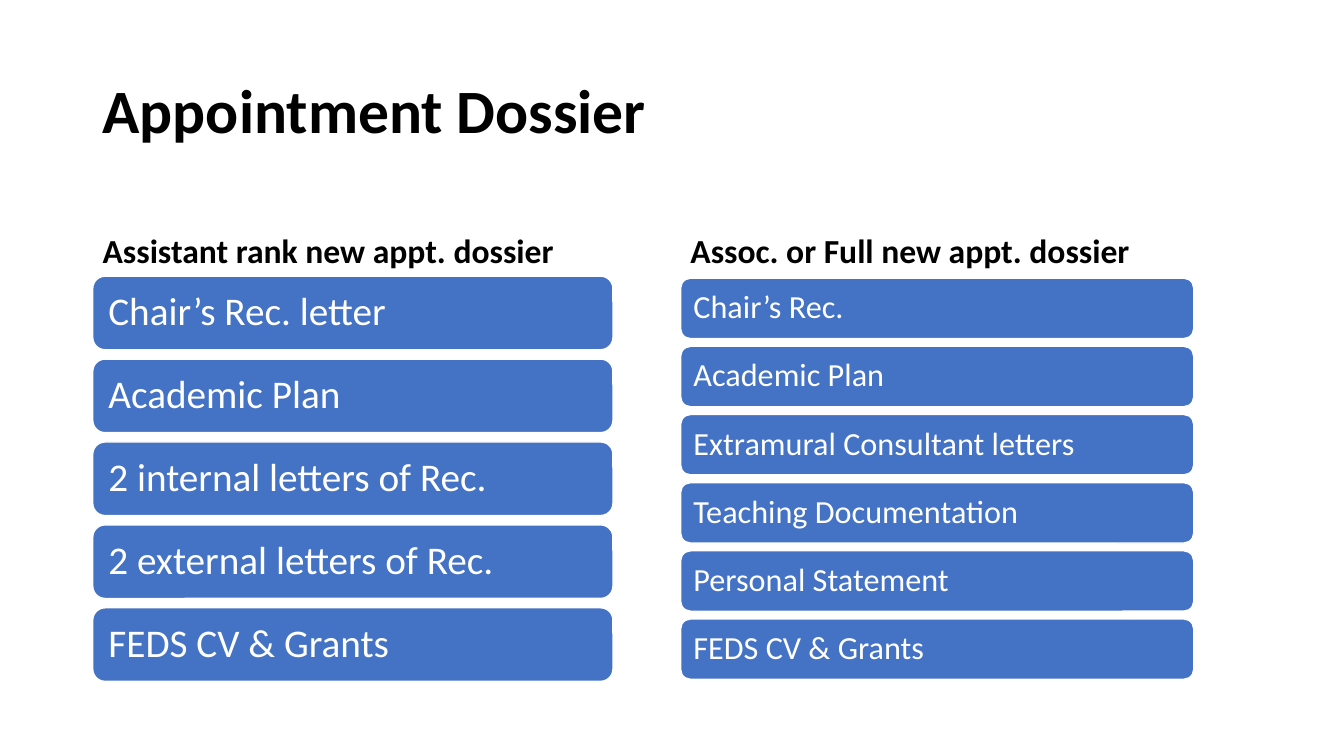
from dataclasses import dataclass
from pptx import Presentation
from pptx.dml.color import RGBColor as Color
from pptx.enum.shapes import MSO_SHAPE as Kind
from pptx.enum.text import MSO_ANCHOR as Anchor, PP_ALIGN as Align
from pptx.util import Pt

TITLE = ("Appointment Dossier", (92, 40, 1150, 145))

COLUMNS = [
    {
        "head": "Assistant rank new appt. dossier",
        "place": (92, 184, 564, 90),
        "items": [
            "Chair’s Rec. letter",
            "Academic Plan",
            "2 internal letters of Rec.",
            "2 external letters of Rec.",
            "FEDS CV & Grants",
        ],
        "first": 274, "last": 603, "width": 516, "height": 73,
        "inset": 12, "size": 28,
    },
    {
        "head": "Assoc. or Full new appt. dossier",
        "place": (675, 184, 567, 90),
        "items": [
            "Chair’s Rec.",
            "Academic Plan",
            "Extramural Consultant letters",
            "Teaching Documentation",
            "Personal Statement",
            "FEDS CV & Grants",
        ],
        "first": 276, "last": 614, "width": 509, "height": 60,
        "inset": 10, "size": 23,
    },
]


@dataclass(frozen=True)
class Theme:
    font: str = "Calibri"
    ink: str = "000000"
    paper: str = "FFFFFF"
    bar: str = "4472C4"
    title: int = 44
    head: int = 24
    edge: int = 1


THEME = Theme()
SCALE = 9144


def px(n):
    return round(n * SCALE)


def write(shape, text, size, color, anchor, bold=False):
    frame = shape.text_frame
    frame.word_wrap = True
    frame.vertical_anchor = anchor
    para = frame.paragraphs[0]
    para.alignment = Align.LEFT
    para.line_spacing = 0.9
    run = para.add_run()
    run.text = text
    run.font.name = THEME.font
    run.font.size = Pt(size)
    run.font.bold = bold
    run.font.color.rgb = Color.from_string(color)
    return frame


def label(slide, text, place, size, anchor):
    box = slide.shapes.add_textbox(*map(px, place))
    write(box, text, size, THEME.ink, anchor, True)


def bar(slide, text, place, size, inset):
    shape = slide.shapes.add_shape(Kind.ROUNDED_RECTANGLE, *map(px, place))
    shape.shadow.inherit = False
    shape.fill.solid()
    shape.fill.fore_color.rgb = Color.from_string(THEME.bar)
    shape.line.color.rgb = Color.from_string(THEME.paper)
    shape.line.width = Pt(THEME.edge)
    frame = write(shape, text, size, THEME.paper, Anchor.MIDDLE)
    frame.margin_left = frame.margin_right = px(inset)
    frame.margin_top = frame.margin_bottom = px(inset)


def column(slide, col):
    label(slide, col["head"], col["place"], THEME.head, Anchor.BOTTOM)
    left = col["place"][0]
    step = (col["last"] - col["first"]) / (len(col["items"]) - 1)
    for i, text in enumerate(col["items"]):
        place = (left, col["first"] + i * step, col["width"], col["height"])
        bar(slide, text, place, col["size"], col["inset"])


def main():
    deck = Presentation()
    deck.slide_width, deck.slide_height = px(1333), px(750)
    slide = deck.slides.add_slide(deck.slide_layouts[6])
    text, place = TITLE
    label(slide, text, place, THEME.title, Anchor.MIDDLE)
    for col in COLUMNS:
        column(slide, col)
    deck.save("out.pptx")


if __name__ == "__main__":
    main()
